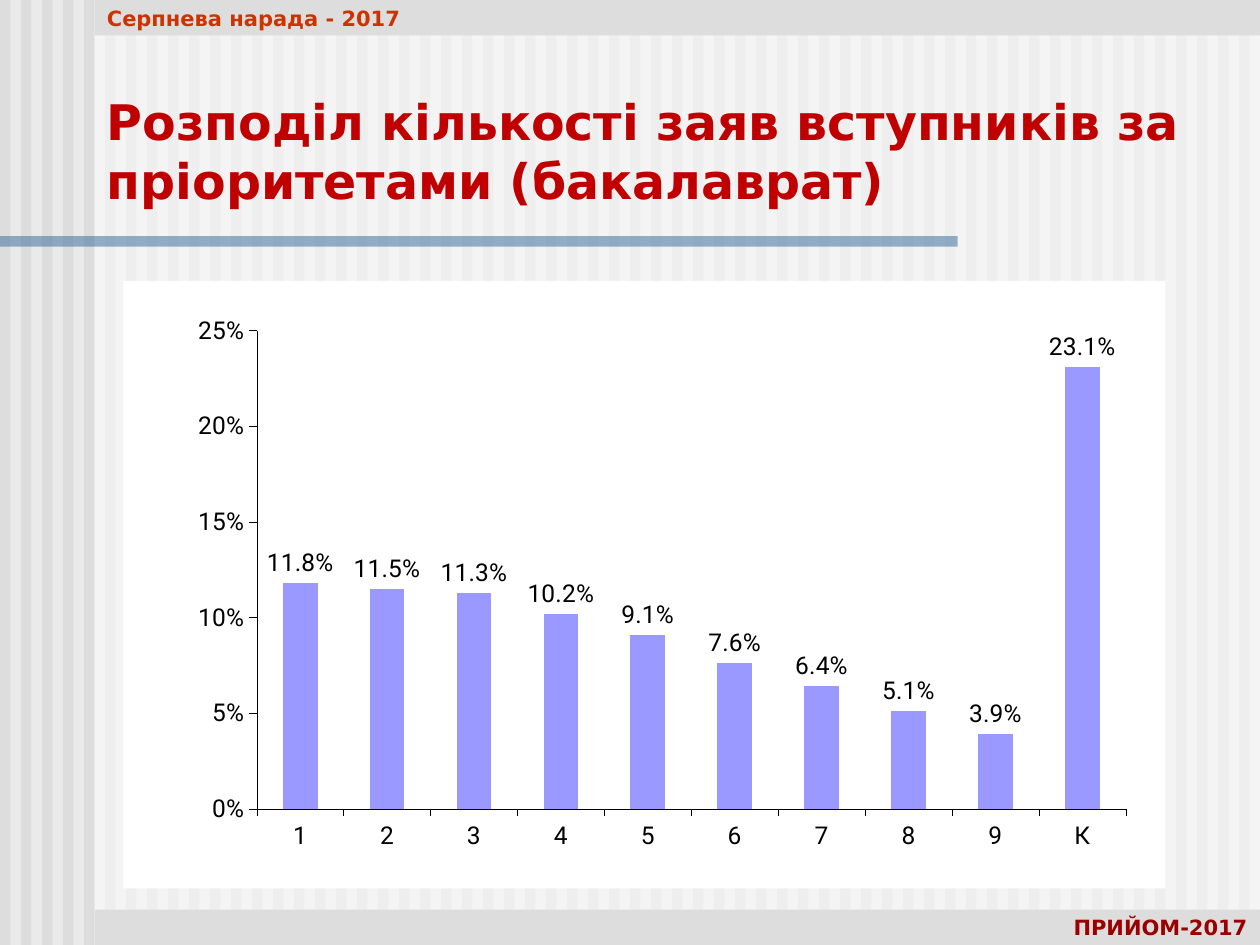
from lxml.etree import SubElement
from pptx import Presentation
from pptx.chart.data import CategoryChartData
from pptx.dml.color import RGBColor
from pptx.enum.chart import XL_CHART_TYPE, XL_LABEL_POSITION, XL_TICK_MARK
from pptx.enum.shapes import MSO_SHAPE
from pptx.enum.text import MSO_ANCHOR, PP_ALIGN
from pptx.oxml import parse_xml
from pptx.oxml.ns import nsdecls, qn
from pptx.util import Pt

BACKGROUND = RGBColor(0xEA, 0xEA, 0xEA)
GREY = RGBColor(0xDD, 0xDD, 0xDD)
WHITE = RGBColor(0xFF, 0xFF, 0xFF)
BLACK = RGBColor(0x00, 0x00, 0x00)
BLUE = RGBColor(0x33, 0x66, 0x99)
TITLE_RED = RGBColor(0xC0, 0x00, 0x00)
HEADER_RED = RGBColor(0xCC, 0x33, 0x00)
FOOTER_RED = RGBColor(0x9A, 0x00, 0x00)
COLUMN_BLUE = RGBColor(0x99, 0x99, 0xFF)

# Content
TITLE = "Розподіл кількості заяв вступників за пріоритетами (бакалаврат)"
BANDS = [  # text, top, alignment, colour
    ("Серпнева нарада - 2017", 0, PP_ALIGN.LEFT, HEADER_RED),
    ("ПРИЙОМ-2017", 519.75, PP_ALIGN.RIGHT, FOOTER_RED),
]
SHARES = {
    "1": 0.118, "2": 0.115, "3": 0.113, "4": 0.102, "5": 0.091,
    "6": 0.076, "7": 0.064, "8": 0.051, "9": 0.039, "К": 0.231,
}
PLOT_LAYOUT = {"x": 0.128, "y": 0.082, "w": 0.834, "h": 0.787}

# Layout
WIDTH, HEIGHT = 720, 540
STRIPE_WIDTH = 6
STRIPE_PITCH = 2 * STRIPE_WIDTH
MARGIN = 54
BAND_HEIGHT = 20.25


def add_rectangle(slide, left, top, width, height, color, alpha=None):
    rectangle = slide.shapes.add_shape(
        MSO_SHAPE.RECTANGLE, Pt(left), Pt(top), Pt(width), Pt(height))
    rectangle.shadow.inherit = False
    rectangle.fill.solid()
    rectangle.fill.fore_color.rgb = color
    rectangle.line.fill.background()
    if alpha is not None:
        srgb = rectangle.fill._xPr.find(".//" + qn("a:srgbClr"))
        SubElement(srgb, qn("a:alpha")).set("val", str(alpha * 1000))
    return rectangle


def write(frame, text, align, **font_format):
    frame.word_wrap = True
    paragraph = frame.paragraphs[0]
    paragraph.alignment = align
    run = paragraph.add_run()
    run.text = text
    run.font.color.rgb = font_format.pop("color")
    for name, value in {"name": "DejaVu Sans", "bold": True, **font_format}.items():
        setattr(run.font, name, value)


def style_line(line, color):
    line.color.rgb = color
    line.width = Pt(0.25)


def white_area():
    return parse_xml(
        f'<c:spPr {nsdecls("c", "a")}><a:solidFill><a:srgbClr val="{WHITE}"/>'
        "</a:solidFill><a:ln><a:noFill/></a:ln></c:spPr>")


def add_share_chart(slide):
    data = CategoryChartData(number_format="0.0%")
    data.categories = list(SHARES)
    data.add_series("Series 1", list(SHARES.values()))
    chart = slide.shapes.add_chart(
        XL_CHART_TYPE.COLUMN_CLUSTERED, Pt(70.5), Pt(160.5), Pt(595.5), Pt(347.25),
        data).chart
    chart.has_legend = chart.has_title = False
    chart.font.size = Pt(14)
    chart.font.name = "Roboto"
    chart.font.color.rgb = BLACK

    # Axes
    for axis in (chart.category_axis, chart.value_axis):
        axis.major_tick_mark = XL_TICK_MARK.OUTSIDE
        axis.minor_tick_mark = XL_TICK_MARK.NONE
        style_line(axis.format.line, BLACK)
    shares_axis = chart.value_axis
    for name, value in {"minimum_scale": 0, "maximum_scale": 0.25, "major_unit": 0.05,
                        "has_major_gridlines": True}.items():
        setattr(shares_axis, name, value)
    style_line(shares_axis.major_gridlines.format.line, WHITE)
    shares_axis.tick_labels.number_format = "0%"
    shares_axis.tick_labels.number_format_is_linked = False

    # Columns and their labels
    columns = chart.plots[0]
    columns.gap_width = 150
    columns.vary_by_categories = False
    columns.series[0].format.fill.solid()
    columns.series[0].format.fill.fore_color.rgb = COLUMN_BLUE
    columns.has_data_labels = True
    for name, value in {"show_value": True, "number_format": "0.0%",
                        "number_format_is_linked": False,
                        "position": XL_LABEL_POSITION.OUTSIDE_END}.items():
        setattr(columns.data_labels, name, value)

    # White chart and plot areas, fixed inner plot position
    plot_area = chart._chartSpace.chart.plotArea
    chart._chartSpace.chart.addnext(white_area())
    plot_area.append(white_area())
    for layout in plot_area.findall(qn("c:layout")):
        plot_area.remove(layout)
    sizes = "".join(f'<c:{k} val="{v}"/>' for k, v in PLOT_LAYOUT.items())
    plot_area.insert(0, parse_xml(
        f'<c:layout {nsdecls("c")}><c:manualLayout><c:layoutTarget val="inner"/>'
        f'<c:xMode val="edge"/><c:yMode val="edge"/>{sizes}</c:manualLayout></c:layout>'))


def main():
    presentation = Presentation()
    presentation.slide_width, presentation.slide_height = Pt(WIDTH), Pt(HEIGHT)
    slide = presentation.slides.add_slide(presentation.slide_layouts[6])
    slide.background.fill.solid()
    slide.background.fill.fore_color.rgb = BACKGROUND

    # Striped backdrop, veil and rule under the title
    for left in range(0, WIDTH, STRIPE_PITCH):
        add_rectangle(slide, left, 0, STRIPE_WIDTH, HEIGHT, GREY)
    add_rectangle(slide, MARGIN, 0, WIDTH - MARGIN, HEIGHT, WHITE, alpha=50)
    add_rectangle(slide, 0, 135, 547.25, 6, BLUE, alpha=50)

    # Title
    title = slide.shapes.add_textbox(Pt(MARGIN), Pt(49), Pt(664.5), Pt(73.5))
    write(title.text_frame, TITLE, PP_ALIGN.LEFT, size=Pt(28), color=TITLE_RED)
    title.text_frame.paragraphs[0].space_before = Pt(5.6)

    # Header and footer bands
    for text, top, align, color in BANDS:
        band = add_rectangle(slide, MARGIN, top, WIDTH - MARGIN, BAND_HEIGHT, GREY)
        band.text_frame.vertical_anchor = MSO_ANCHOR.MIDDLE
        write(band.text_frame, text, align, size=Pt(12), color=color)

    add_share_chart(slide)
    presentation.save("out.pptx")


if __name__ == "__main__":
    main()
